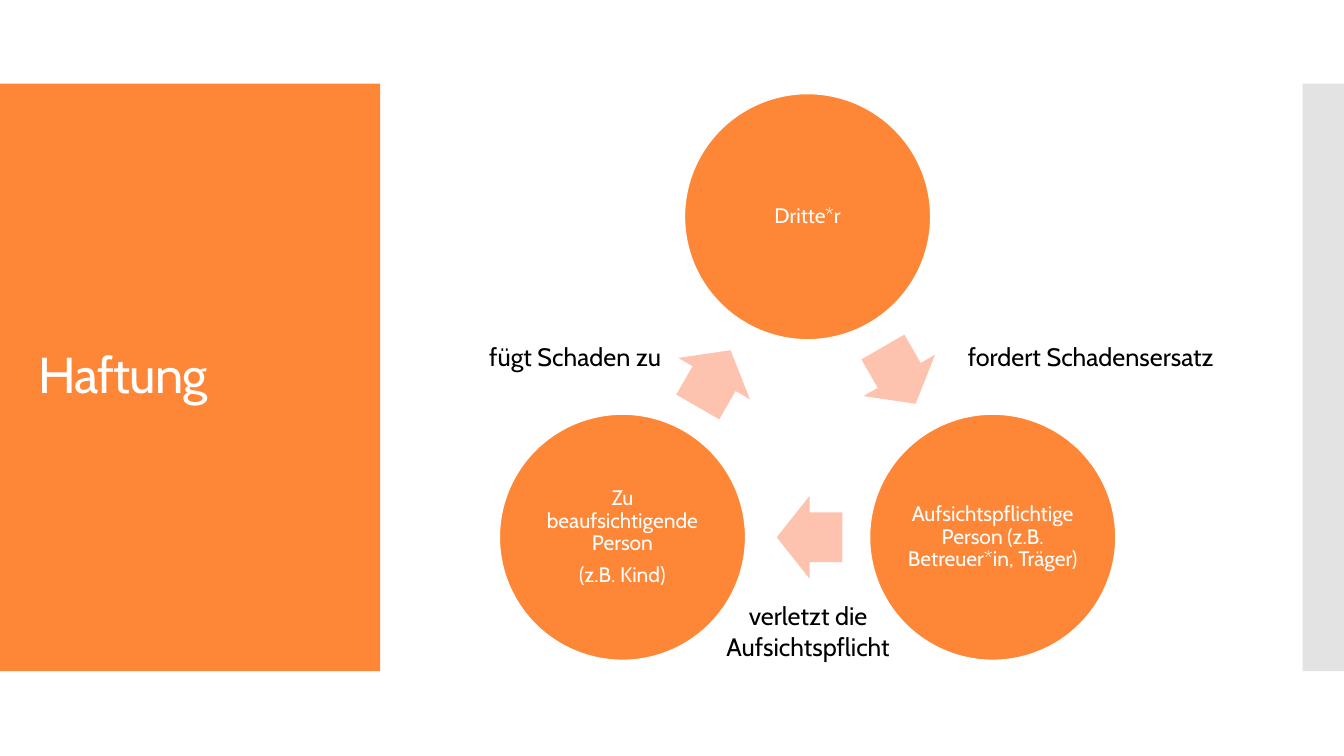
from math import cos, radians, sin

from lxml.etree import SubElement
from pptx import Presentation
from pptx.dml.color import RGBColor
from pptx.enum.shapes import MSO_SHAPE as Shape
from pptx.enum.text import MSO_ANCHOR as Anchor, MSO_AUTO_SIZE as AutoSize, PP_ALIGN as Align
from pptx.oxml.ns import qn
from pptx.util import Inches, Pt

ORANGE, PINK, GREY, WHITE, BLACK = "FE8637", "FEC3AE", "C8C8C8", "FFFFFF", "000000"


def paint(format_part, color):
    if hasattr(format_part, "solid"):
        format_part.solid()
        format_part = format_part.fore_color
    else:
        format_part = format_part.color
    format_part.rgb = RGBColor.from_string(color)


def write(box, lines, size=18, color=BLACK, align=Align.CENTER, anchor=Anchor.TOP,
          margin=None, leading=None, after=0, tracking=0):
    frame = box.text_frame
    frame.word_wrap = True
    frame.vertical_anchor = anchor
    if margin is not None:
        frame.margin_left = frame.margin_right = Inches(margin)
        frame.margin_top = frame.margin_bottom = Inches(margin)
    for number, line in enumerate(lines):
        para = frame.add_paragraph() if number else frame.paragraphs[0]
        para.alignment = align
        para.line_spacing = leading
        para.space_before = Pt(0)
        para.space_after = Pt(after)
        span = para.add_run()
        span.text = line
        span.font.name = "Cabin"
        span.font.size = Pt(size)
        paint(span.font.fill, color)
        if tracking:
            span.font._element.set("spc", str(tracking))


deck = Presentation()
deck.slide_width, deck.slide_height = Inches(13.33), Inches(7.5)
page = deck.slides.add_slide(deck.slide_layouts[5])
paint(page.background.fill, WHITE)

title = page.shapes.title
title.left, title.top = Inches(0.28), Inches(1.23)
title.width, title.height = Inches(3.22), Inches(5.03)
write(title, ["Haftung"], size=36, color=WHITE, align=Align.LEFT,
      anchor=Anchor.MIDDLE, leading=0.9, tracking=-60)
title.text_frame.auto_size = AutoSize.NONE

for left, width, color in [(0, 3.77, ORANGE), (12.92, 0.41, GREY)]:
    panel = page.shapes.add_shape(Shape.RECTANGLE, Inches(left), Inches(0.83),
                                  Inches(width), Inches(5.83))
    panel.shadow.inherit = False
    paint(panel.fill, color)
    panel.line.fill.background()
    title.element.addprevious(panel.element)
    if color == GREY:
        tint = panel.element.spPr.find(qn("a:solidFill"))[0]
        SubElement(tint, qn("a:alpha")).set("val", "50000")

CENTER_X, CENTER_Y, RADIUS = 8.01, 4.27, 2.12
DIAMETER, ARROW_LENGTH, ARROW_WIDTH = 2.44, 0.65, 0.82
ARROW_SHARE = 0.495
parties = [
    ["Dritte*r"],
    ["Aufsichtspflichtige Person (z.B. Betreuer*in, Träger)"],
    ["Zu beaufsichtigende Person", "(z.B. Kind)"],
]
angles = [radians(120 * step - 90) for step in range(3)]
centers = [(CENTER_X + RADIUS * cos(angle), CENTER_Y + RADIUS * sin(angle)) for angle in angles]

for step, (party, (x, y)) in enumerate(zip(parties, centers)):
    circle = page.shapes.add_shape(Shape.OVAL, Inches(x - DIAMETER / 2), Inches(y - DIAMETER / 2),
                                   Inches(DIAMETER), Inches(DIAMETER))
    circle.shadow.inherit = False
    paint(circle.fill, ORANGE)
    paint(circle.line, WHITE)
    circle.line.width = Pt(0.85)
    write(circle, party, size=15, color=WHITE, anchor=Anchor.MIDDLE,
          margin=0.02, leading=0.9, after=6.3)

    next_x, next_y = centers[(step + 1) % 3]
    arrow_x = x + (next_x - x) * ARROW_SHARE
    arrow_y = y + (next_y - y) * ARROW_SHARE
    arrow = page.shapes.add_shape(Shape.RIGHT_ARROW, Inches(arrow_x - ARROW_LENGTH / 2),
                                  Inches(arrow_y - ARROW_WIDTH / 2),
                                  Inches(ARROW_LENGTH), Inches(ARROW_WIDTH))
    arrow.shadow.inherit = False
    arrow.rotation = 60 + 120 * step
    arrow.adjustments[0], arrow.adjustments[1] = 0.6, 0.5
    paint(arrow.fill, PINK)
    arrow.line.fill.background()

captions = [
    ("fügt Schaden zu", 4.17, 3.34, 3.07, 0.4, Align.CENTER),
    ("fordert Schadensersatz", 9.5, 3.34, 2.72, 0.4, Align.LEFT),
    ("verletzt die Aufsichtspflicht", 6.71, 5.91, 2.61, 0.71, Align.CENTER),
]
for caption, left, top, width, height, align in captions:
    box = page.shapes.add_textbox(Inches(left), Inches(top), Inches(width), Inches(height))
    write(box, [caption], align=align)
    box.text_frame.auto_size = AutoSize.SHAPE_TO_FIT_TEXT

deck.save("out.pptx")
